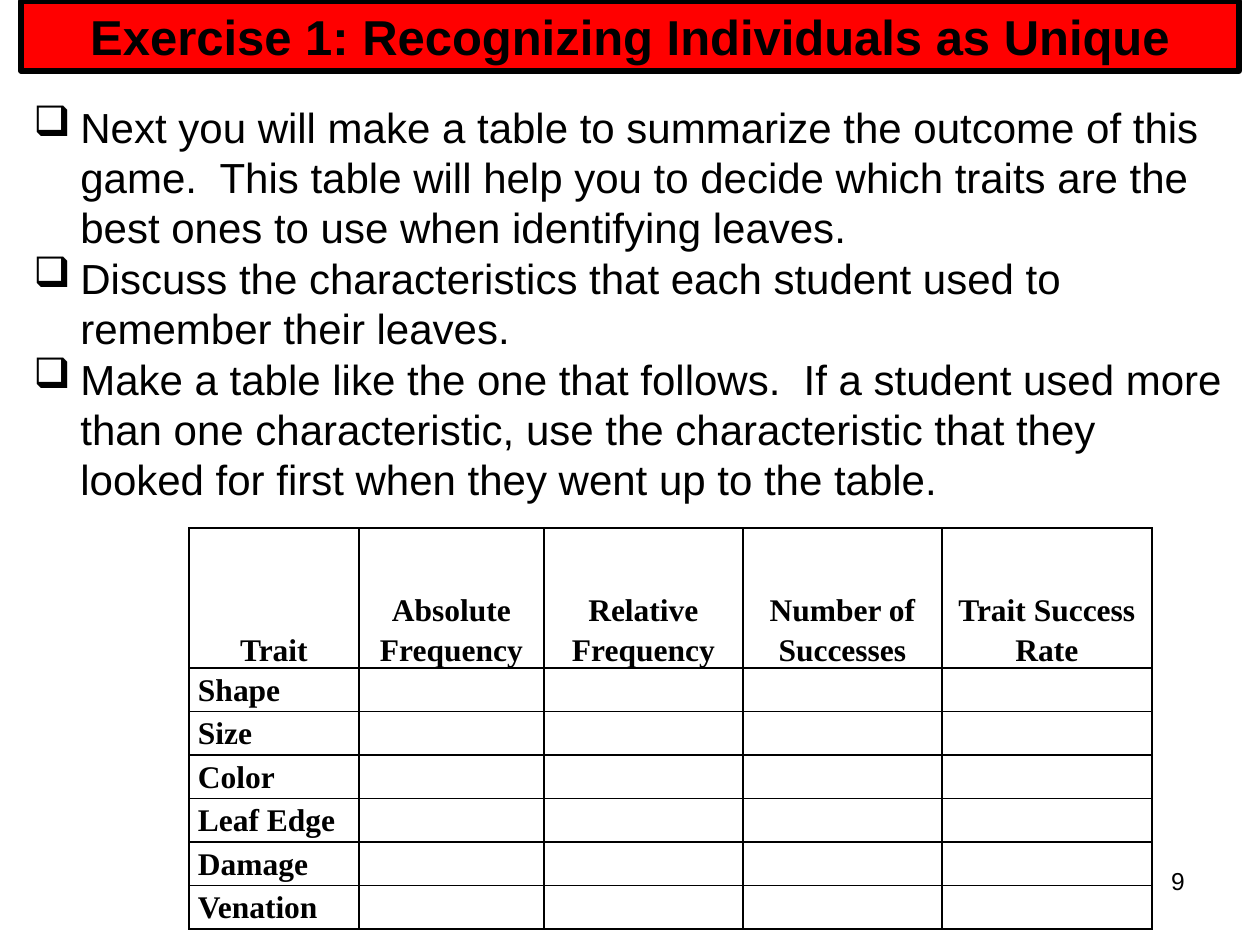
from lxml import etree
from pptx import Presentation, util as u
from pptx.dml.color import RGBColor
from pptx.enum import shapes, text
from pptx.oxml import ns

BLACK = RGBColor(0, 0, 0)
WHITE = RGBColor(255, 255, 255)
RED = RGBColor(255, 0, 0)
PX_PER_INCH = 126

TITLE = "Exercise 1: Recognizing Individuals as Unique"
INSTRUCTIONS = [
    "Next you will make a table to summarize the outcome of this game.  This table will help you "
    "to decide which traits are the best ones to use when identifying leaves.",
    "Discuss the characteristics that each student used to remember their leaves.",
    "Make a table like the one that follows.  If a student used more than one characteristic, use "
    "the characteristic that they looked for first when they went up to the table.",
]
HEADINGS = ["Trait", "Absolute Frequency", "Relative Frequency", "Number of Successes",
            "Trait Success Rate"]
TRAITS = ["Shape", "Size", "Color", "Leaf Edge", "Damage", "Venation"]
COLUMN_WIDTHS = [170, 185, 199, 199, 210]
HEADING_HEIGHT, TRAIT_HEIGHT = 140, 43


def px(length):
    """Turn px into EMU."""
    return u.Emu(round(length * 914400 / PX_PER_INCH))


def add_words(paragraph, words, size, face="Arial", bold=False):
    """Add one black run to a paragraph."""
    run = paragraph.add_run()
    run.text = words
    run.font.size = u.Pt(size)
    run.font.name = face
    run.font.bold = bold
    run.font.color.rgb = BLACK


def add_title(slide, box):
    """Draw the red title banner."""
    banner = slide.shapes.add_shape(shapes.MSO_SHAPE.RECTANGLE, *map(px, box))
    banner.shadow.inherit = False
    banner.fill.solid()
    banner.fill.fore_color.rgb = RED
    banner.line.color.rgb = BLACK
    banner.line.width = u.Pt(3)
    frame = banner.text_frame
    frame.word_wrap = True
    frame.vertical_anchor = text.MSO_ANCHOR.MIDDLE
    frame.paragraphs[0].alignment = text.PP_ALIGN.CENTER
    add_words(frame.paragraphs[0], TITLE, 28, bold=True)


def add_instructions(slide, box):
    """Write the checklist of instructions."""
    frame = slide.shapes.add_textbox(*map(px, box)).text_frame
    frame.word_wrap = True
    for index, instruction in enumerate(INSTRUCTIONS):
        paragraph = frame.add_paragraph() if index else frame.paragraphs[0]
        properties = paragraph._p.get_or_add_pPr()
        properties.set("marL", str(px(47)))
        properties.set("indent", str(-px(47)))
        etree.SubElement(properties, ns.qn("a:buChar")).set("char", "❑")
        add_words(paragraph, instruction, 24)


def add_borders(cell):
    """Rule all four sides of a cell in black."""
    properties = cell._tc.get_or_add_tcPr()
    for position, side in enumerate(("a:lnL", "a:lnR", "a:lnT", "a:lnB")):
        border = etree.Element(ns.qn(side), w=str(u.Pt(1)))
        ink = etree.SubElement(border, ns.qn("a:solidFill"))
        etree.SubElement(ink, ns.qn("a:srgbClr"), val=str(BLACK))
        properties.insert(position, border)


def fill_cell(cell, words, is_heading):
    """Style a cell and write its words, if any."""
    cell.fill.solid()
    cell.fill.fore_color.rgb = WHITE
    cell.margin_left = cell.margin_right = px(9)
    cell.margin_top = cell.margin_bottom = 0
    add_borders(cell)
    paragraph = cell.text_frame.paragraphs[0]
    if is_heading:
        cell.vertical_anchor = text.MSO_ANCHOR.BOTTOM
        paragraph.alignment = text.PP_ALIGN.CENTER
    if words:
        paragraph.line_spacing = 1.15
        add_words(paragraph, words, 18, "Times New Roman", True)


def add_trait_table(slide, left, top):
    """Build the table of traits with blank result columns."""
    rows = [HEADINGS] + [[trait] + [""] * (len(HEADINGS) - 1) for trait in TRAITS]
    heights = [HEADING_HEIGHT] + [TRAIT_HEIGHT] * len(TRAITS)
    box = left, top, sum(COLUMN_WIDTHS), sum(heights)
    table = slide.shapes.add_table(len(rows), len(HEADINGS), *map(px, box)).table
    for column, width in zip(table.columns, COLUMN_WIDTHS):
        column.width = px(width)
    for index, (row, height) in enumerate(zip(table.rows, heights)):
        row.height = px(height)
        for cell, words in zip(row.cells, rows[index]):
            fill_cell(cell, words, index == 0)


def add_page_number(slide, box):
    """Write the page number at the lower right."""
    frame = slide.shapes.add_textbox(*map(px, box)).text_frame
    frame.word_wrap = True
    frame.paragraphs[0].alignment = text.PP_ALIGN.RIGHT
    add_words(frame.paragraphs[0], "9", 14)


def main():
    """Build and save the slide."""
    deck = Presentation()
    deck.slide_width, deck.slide_height = px(1260), px(945)
    slide = deck.slides.add_slide(deck.slide_layouts[6])
    add_page_number(slide, (903, 860, 294, 66))
    add_title(slide, (21, 1, 1218, 70))
    add_instructions(slide, (21, 95, 1218, 832))
    add_trait_table(slide, 189, 528)
    deck.save("out.pptx")


if __name__ == "__main__":
    main()
